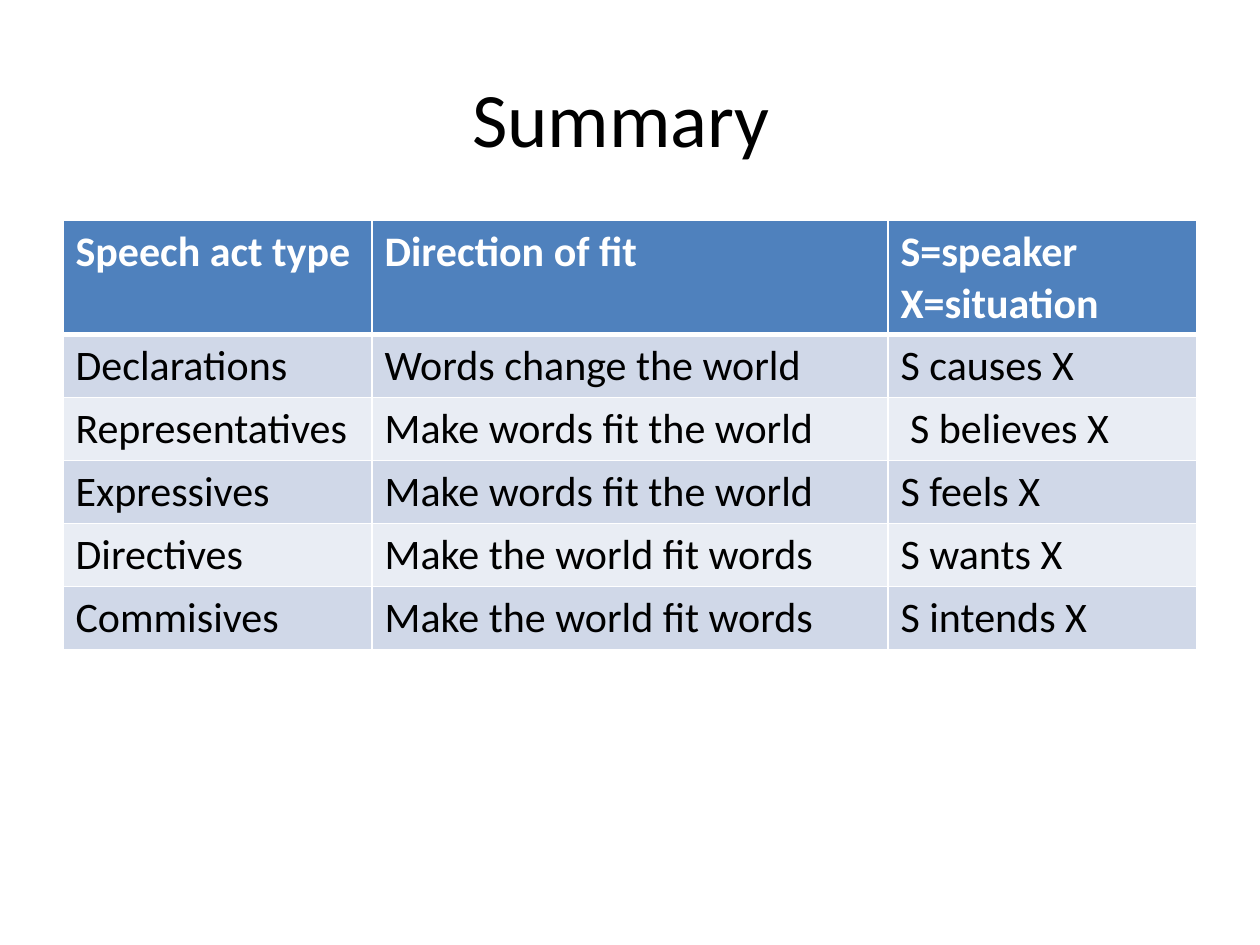
"""Build a summary slide with a table of speech act types."""
from lxml.etree import SubElement
from pptx import Presentation
from pptx.dml.color import RGBColor
from pptx.enum.text import MSO_ANCHOR, PP_ALIGN
from pptx.oxml.ns import qn
from pptx.util import Cm, Pt

WHITE = RGBColor(0xFF, 0xFF, 0xFF)
BLACK = RGBColor(0x00, 0x00, 0x00)
HEADER_BLUE = RGBColor(0x4F, 0x81, 0xBD)
BAND_COLOURS = (RGBColor(0xE9, 0xED, 0xF4), RGBColor(0xD0, 0xD8, 0xE8))

TITLE_FORMAT = {"name": "Calibri", "size": Pt(44), "bold": False}
HEADER_FORMAT = {"name": "Calibri", "size": Pt(24), "bold": True}
BODY_FORMAT = {"name": "Calibri", "size": Pt(24), "bold": False}

ROWS = (
    ("Speech act type", "Direction of fit", "S=speaker\nX=situation"),
    ("Declarations", "Words change the world", "S causes X"),
    ("Representatives", "Make words fit the world", " S believes X"),
    ("Expressives", "Make words fit the world", "S feels X"),
    ("Directives", "Make the world fit words", "S wants X"),
    ("Commisives", "Make the world fit words", "S intends X"),
)
COLUMN_WIDTHS = (Cm(6.23), Cm(10.4), Cm(6.23))
ROW_HEIGHT = Cm(1.03)


def write_text(text_frame, text, font_format, colour):
    text_frame.text = text
    for paragraph in text_frame.paragraphs:
        font = paragraph.runs[0].font
        for attribute, value in font_format.items():
            setattr(font, attribute, value)
        font.color.rgb = colour


def add_border(cell, side, width):
    properties = cell._tc.get_or_add_tcPr()
    line = SubElement(properties, qn(f"a:ln{side}"), w=str(width))
    fill = SubElement(line, qn("a:solidFill"))
    SubElement(fill, qn("a:srgbClr"), val=str(WHITE))


presentation = Presentation()
presentation.slide_width = Cm(25.4)
presentation.slide_height = Cm(19.05)
slide = presentation.slides.add_slide(presentation.slide_layouts[6])

title = slide.shapes.add_textbox(Cm(1.27), Cm(0.76), Cm(22.86), Cm(3.18))
title.text_frame.word_wrap = True
title.text_frame.vertical_anchor = MSO_ANCHOR.MIDDLE
write_text(title.text_frame, "Summary ", TITLE_FORMAT, BLACK)
title.text_frame.paragraphs[0].alignment = PP_ALIGN.CENTER

table = slide.shapes.add_table(
    len(ROWS), len(COLUMN_WIDTHS), Cm(1.27), Cm(4.45),
    sum(COLUMN_WIDTHS), ROW_HEIGHT * len(ROWS),
).table
for column, width in zip(table.columns, COLUMN_WIDTHS):
    column.width = width

for row_index, row_texts in enumerate(ROWS):
    is_header = row_index == 0
    table.rows[row_index].height = ROW_HEIGHT
    border_widths = {
        "L": Pt(1),
        "R": Pt(1),
        "T": Pt(3) if row_index == 1 else Pt(1),
        "B": Pt(3) if is_header else Pt(1),
    }
    for column_index, text in enumerate(row_texts):
        cell = table.cell(row_index, column_index)
        for side, width in border_widths.items():
            add_border(cell, side, width)
        cell.fill.solid()
        cell.fill.fore_color.rgb = HEADER_BLUE if is_header else BAND_COLOURS[row_index % 2]
        write_text(
            cell.text_frame, text,
            HEADER_FORMAT if is_header else BODY_FORMAT,
            WHITE if is_header else BLACK,
        )

presentation.save("out.pptx")
